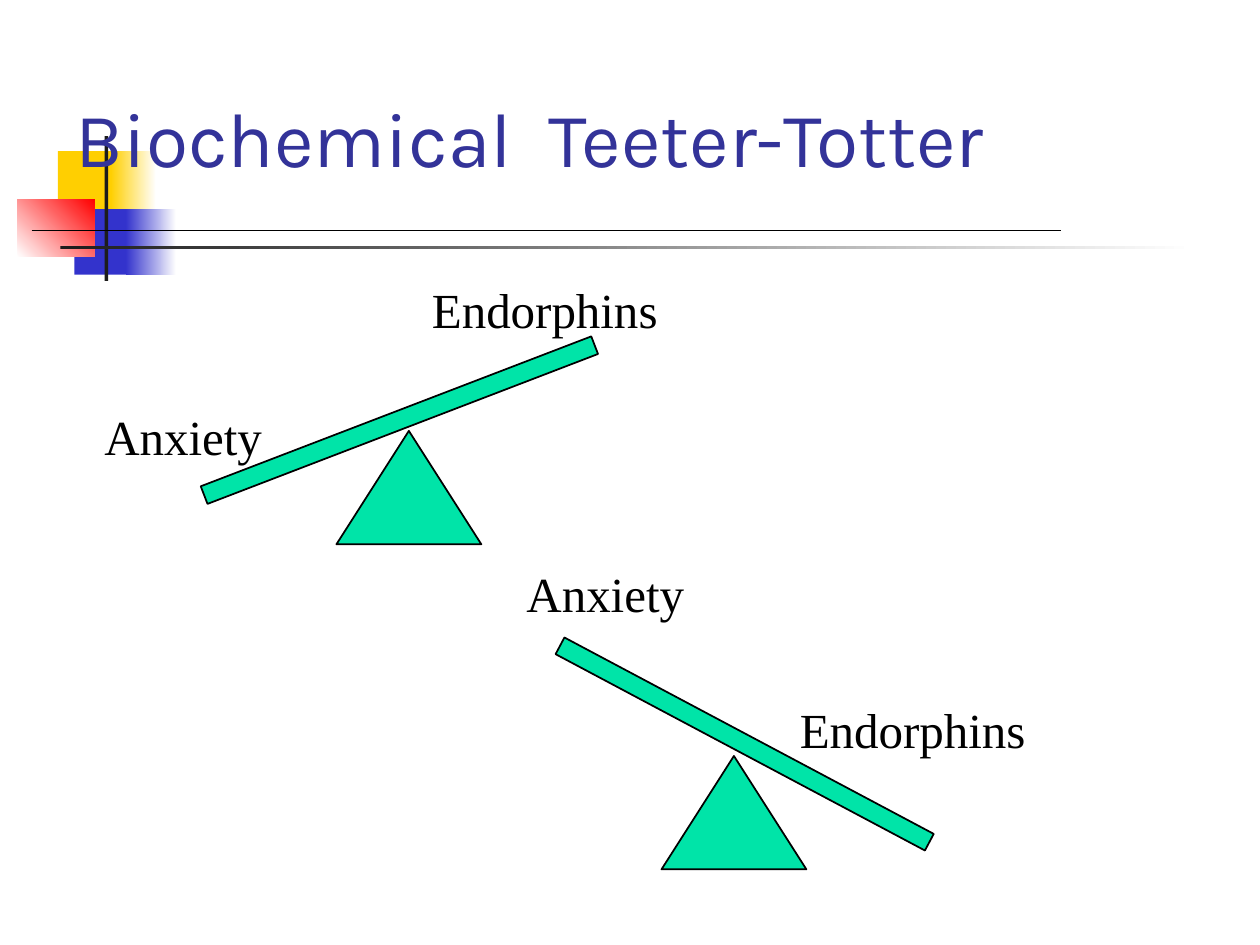
from typing import NamedTuple, Optional

from lxml.etree import SubElement
from pptx import Presentation
from pptx.dml.color import RGBColor
from pptx.enum.shapes import MSO_CONNECTOR, MSO_SHAPE
from pptx.enum.text import MSO_ANCHOR, MSO_AUTO_SIZE
from pptx.oxml.ns import qn
from pptx.util import Inches, Pt

WHITE = RGBColor(0xFF, 0xFF, 0xFF)
BLACK = RGBColor(0x00, 0x00, 0x00)
CHARCOAL = RGBColor(0x1C, 0x1C, 0x1C)
YELLOW = RGBColor(0xFF, 0xCF, 0x01)
BLUE = RGBColor(0x33, 0x33, 0xCC)
RED = RGBColor(0xFF, 0x00, 0x00)
NAVY = RGBColor(0x33, 0x33, 0x99)
GREEN = RGBColor(0x00, 0xE4, 0xA8)


class Box(NamedTuple):
    left: float
    top: float
    width: float
    height: float


class Block(NamedTuple):
    """A borderless rectangle, shaded from color to fade_to when that is given."""
    box: Box
    color: RGBColor
    fade_to: Optional[RGBColor] = None
    angle: float = 0


class Label(NamedTuple):
    text: str
    box: Box
    wrap: bool


class Seesaw(NamedTuple):
    fulcrum: tuple[float, float]
    plank: tuple[float, float]
    tilt: float
    labels: tuple[Label, ...]


FULCRUM_SIZE = (1.15, 0.9)
PLANK_SIZE = (3.32, 0.15)

BLOCKS = (
    Block(Box(0.46, 1.2, 0.48, 0.52), YELLOW),
    Block(Box(0.88, 1.2, 0.36, 0.52), YELLOW, WHITE),
    Block(Box(0.59, 1.66, 0.46, 0.52), BLUE),
    Block(Box(1, 1.66, 0.4, 0.52), BLUE, WHITE),
    Block(Box(0.14, 1.58, 0.61, 0.46), WHITE, RED, 45),
    Block(Box(0.83, 1.08, 0.03, 1.15), CHARCOAL),
    Block(Box(0.48, 1.95, 9, 0.03), CHARCOAL, WHITE),
)

SEESAWS = (
    Seesaw((2.67, 3.42), (1.51, 3.26), -21, (
        Label("Anxiety", Box(0.73, 3.18, 1.45, 0.57), False),
        Label("Endorphins", Box(3.33, 2.17, 1.99, 0.57), False),
    )),
    Seesaw((5.25, 6), (4.25, 5.83), 28, (
        Label("Anxiety", Box(4.08, 4.42, 2.02, 0.57), True),
        Label("Endorphins", Box(6.25, 5.5, 2.31, 0.57), True),
    )),
)


def add_preset(slide, preset: MSO_SHAPE, box: Box):
    shape = slide.shapes.add_shape(preset, *map(Inches, box))
    shape.shadow.inherit = False
    return shape


def add_block(slide, block: Block) -> None:
    shape = add_preset(slide, MSO_SHAPE.RECTANGLE, block.box)
    shape.line.fill.background()
    if block.fade_to is None:
        shape.fill.solid()
        shape.fill.fore_color.rgb = block.color
        return
    shape.fill.gradient()
    shape.fill.gradient_angle = block.angle
    for stop, color in zip(shape.fill.gradient_stops, (block.color, block.fade_to)):
        stop.color.rgb = color


def add_seesaw_part(slide, preset: MSO_SHAPE, box: Box, tilt: float = 0) -> None:
    part = add_preset(slide, preset, box)
    part.rotation = tilt
    part.fill.solid()
    part.fill.fore_color.rgb = GREEN
    part.line.color.rgb = BLACK
    part.line.width = Pt(1)


def add_text(slide, label: Label, font_name: str, size: float, color: RGBColor):
    frame = slide.shapes.add_textbox(*map(Inches, label.box)).text_frame
    frame.word_wrap = label.wrap
    paragraph = frame.paragraphs[0]
    paragraph.text = label.text
    paragraph.font.name = font_name
    paragraph.font.size = Pt(size)
    paragraph.font.color.rgb = color
    return frame


def add_seesaw(slide, seesaw: Seesaw) -> None:
    add_seesaw_part(slide, MSO_SHAPE.ISOSCELES_TRIANGLE,
                    Box(*seesaw.fulcrum, *FULCRUM_SIZE))
    add_seesaw_part(slide, MSO_SHAPE.RECTANGLE,
                    Box(*seesaw.plank, *PLANK_SIZE), seesaw.tilt)
    for label in seesaw.labels:
        frame = add_text(slide, label, "Times New Roman", 28, BLACK)
        frame.auto_size = MSO_AUTO_SIZE.SHAPE_TO_FIT_TEXT


def add_title_rule(slide) -> None:
    rule = slide.shapes.add_connector(
        MSO_CONNECTOR.STRAIGHT, *map(Inches, (0.25, 1.83, 8.42, 1.83)))
    rule.line.color.rgb = BLACK
    rule.line.width = Pt(1)
    SubElement(rule._element.spPr, qn("a:effectLst"))


def main() -> None:
    deck = Presentation()
    deck.slide_width, deck.slide_height = Inches(10), Inches(7.5)
    slide = deck.slides.add_slide(deck.slide_layouts[6])

    for block in BLOCKS:
        add_block(slide, block)
    title = Label("Biochemical  Teeter-Totter", Box(0.5, 0.25, 7.92, 1.25), True)
    title_frame = add_text(slide, title, "Karla", 44, NAVY)
    title_frame.vertical_anchor = MSO_ANCHOR.BOTTOM
    add_title_rule(slide)
    for seesaw in SEESAWS:
        add_seesaw(slide, seesaw)

    deck.save("out.pptx")


if __name__ == "__main__":
    main()
